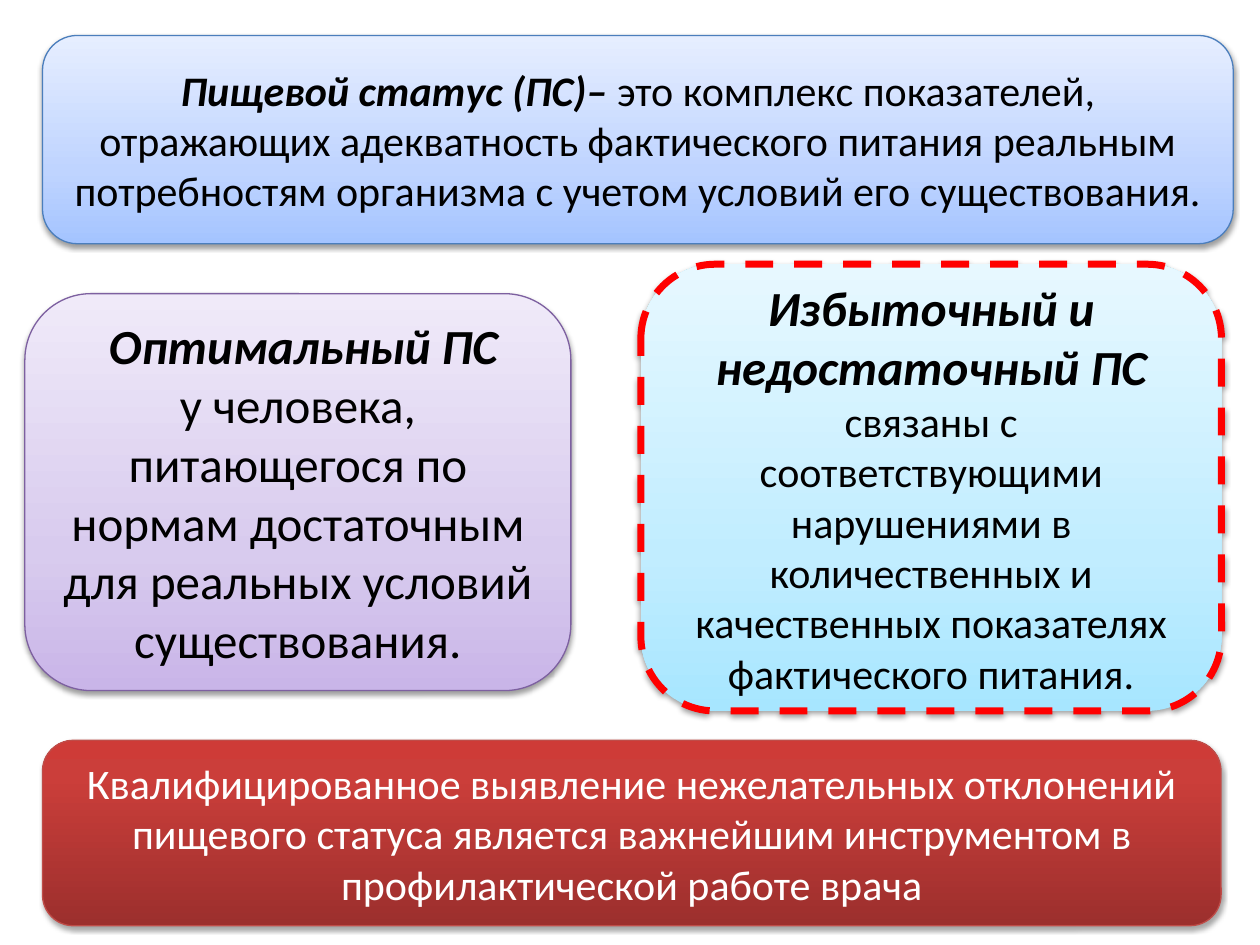
import copy

import pptx
import pptx.dml.color
import pptx.enum.dml
import pptx.enum.shapes
import pptx.enum.text
import pptx.oxml
import pptx.oxml.ns
import pptx.util

Pt = pptx.util.Pt
FONT = "Calibri"
COLORS = {
    "black": "000000", "white": "FFFFFF",
    "blue": "4B7EBC", "violet": "7D60A0", "alert": "FF0000", "brick": "BF4C48",
}
# Gradient stops run from the bottom edge to the top edge.
FADES = {
    "blue": ((0, "A4C4FF"), (0.35, "BFD4FF"), (1, "E6EEFF")),
    "violet": ((0, "C9B5E8"), (0.35, "D8CBEE"), (1, "F0EAF9")),
    "cyan": ((0, "A7E6FF"), (0.35, "C1EDFF"), (1, "E7F8FF")),
    "red": ((0, "9C2F2D"), (0.8, "CB3E3A"), (1, "CE3B37")),
}


def tint(name):
    return pptx.dml.color.RGBColor.from_string(COLORS[name])


def fade(shape, name):
    """Fill the shape with a three-stop vertical gradient."""
    fill = shape.fill
    fill.gradient()
    fill.gradient_angle = 90
    stops = shape._element.spPr.find(".//" + pptx.oxml.ns.qn("a:gsLst"))
    stops.append(copy.deepcopy(stops[-1]))
    for stop, (pos, color) in zip(fill.gradient_stops, FADES[name]):
        stop.position = pos
        stop.color.rgb = pptx.dml.color.RGBColor.from_string(color)


def shade(shape, dist, alpha):
    """Drop a soft shadow straight below the shape."""
    shape.shadow.inherit = False
    effects = shape._element.spPr.find(pptx.oxml.ns.qn("a:effectLst"))
    effects.append(pptx.oxml.parse_xml(
        f'<a:outerShdw {pptx.oxml.ns.nsdecls("a")} blurRad="{Pt(3.1)}" '
        f'dist="{Pt(dist)}" dir="5400000" rotWithShape="0">'
        f'<a:srgbClr val="{COLORS["black"]}"><a:alpha val="{alpha * 1000}"/>'
        '</a:srgbClr></a:outerShdw>'))


def add_card(slide, box, look, line, width=0.75, dist=1.6, alpha=38):
    shape = slide.shapes.add_shape(
        pptx.enum.shapes.MSO_SHAPE.ROUNDED_RECTANGLE, *map(Pt, box))
    fade(shape, look)
    shape.line.color.rgb = tint(line)
    shape.line.width = Pt(width)
    shade(shape, dist, alpha)
    return shape


def write(shape, paras, color="black"):
    """Fill in paragraphs, each a list of (text, size, strong) runs."""
    frame = shape.text_frame
    frame.word_wrap = True
    frame.vertical_anchor = pptx.enum.text.MSO_ANCHOR.MIDDLE
    for i, runs in enumerate(paras):
        para = frame.add_paragraph() if i else frame.paragraphs[0]
        para.alignment = pptx.enum.text.PP_ALIGN.CENTER
        for text, size, strong in runs:
            run = para.add_run()
            run.text = text
            font = run.font
            font.name = FONT
            font.size = Pt(size)
            font.bold = font.italic = strong
            font.color.rgb = tint(color)


def main():
    deck = pptx.Presentation()
    deck.slide_width, deck.slide_height = Pt(720), Pt(540)
    slide = deck.slides.add_slide(deck.slide_layouts[6])

    term = add_card(slide, (24.3, 20.3, 680.4, 119), "blue", "blue")
    write(term, [[
        ("Пищевой статус (ПС)– ", 24, True),
        ("это комплекс показателей, отражающих адекватность фактического "
         "питания реальным потребностям организма с учетом условий его "
         "существования.", 24, False),
    ]])

    norm = add_card(slide, (14.2, 167.8, 312, 226.8), "violet", "violet")
    write(norm, [
        [(" ", 28, False), ("Оптимальный ПС", 28, True)],
        [("у человека, питающегося по нормам достаточным для реальных "
          "условий существования.", 28, False)],
    ])

    risk = add_card(slide, (366.2, 151, 331.8, 255.3), "cyan", "alert", width=4)
    risk.line.dash_style = pptx.enum.dml.MSO_LINE.DASH
    write(risk, [
        [("Избыточный и недостаточный ПС", 28, True)],
        [("связаны с соответствующими нарушениями в количественных и "
          "качественных показателях фактического питания.", 24, False)],
    ])

    goal = add_card(slide, (24.3, 423, 673.5, 106), "red", "brick",
                    dist=1.8, alpha=35)
    write(goal, [[
        ("Квалифицированное выявление нежелательных отклонений пищевого "
         "статуса является важнейшим инструментом в профилактической "
         "работе врача", 24, False),
    ]], "white")

    deck.save("out.pptx")


if __name__ == "__main__":
    main()
